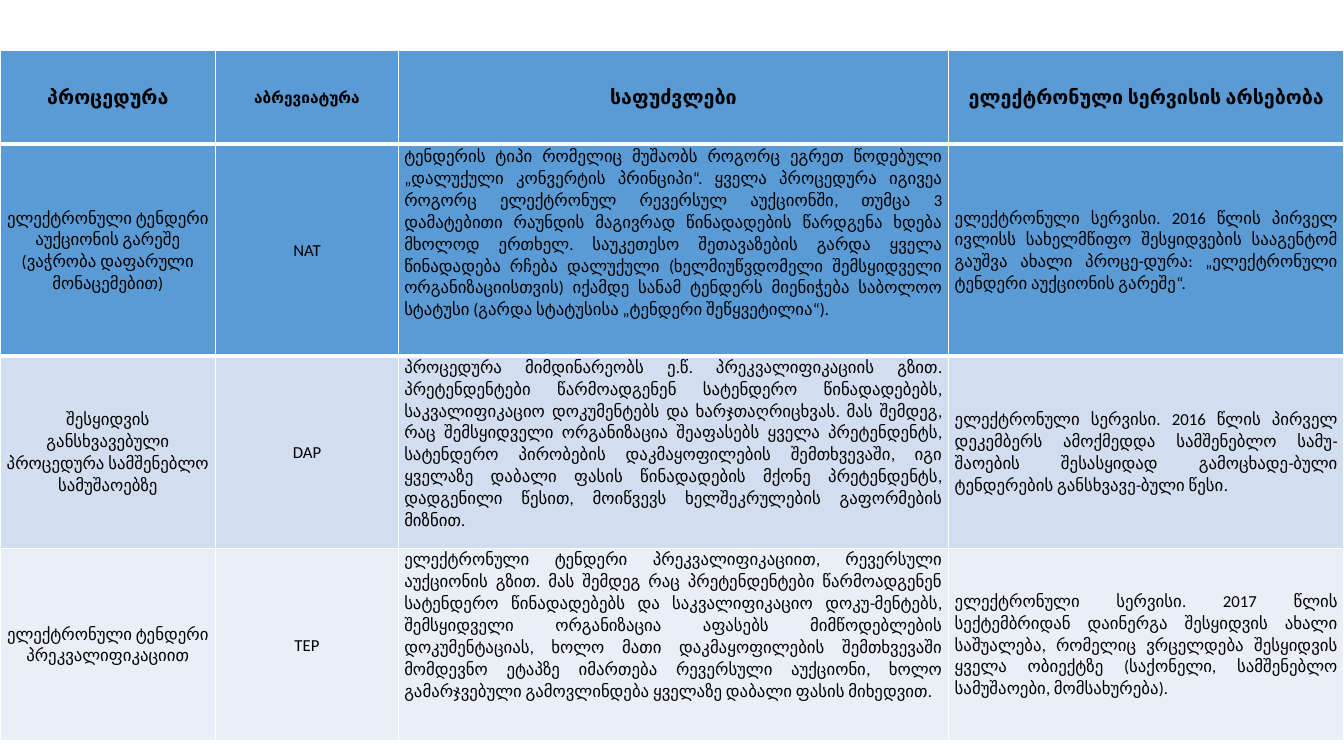
from lxml import etree
from pptx import Presentation
from pptx import util as u
from pptx.dml.color import RGBColor
from pptx.enum import text
from pptx.oxml import ns

COLORS = {"blue": "5B9BD5", "band": "D2DEEF", "pale": "EAEFF7",
          "line": "FFFFFF", "ink": "000000"}
FONT = "Calibri"
COLUMNS = [2.14, 1.81, 5.46, 3.92]
HEADER_TOP, HEADER_HEIGHT = 0.5, 0.93
BODY_TOP, BODY_HEIGHTS = 1.44, [2.09, 1.91, 1.91]
CENTER, JUSTIFY = text.PP_ALIGN.CENTER, text.PP_ALIGN.JUSTIFY
MIDDLE, TOP = text.MSO_ANCHOR.MIDDLE, text.MSO_ANCHOR.TOP

HEADINGS = ["პროცედურა", "აბრევიატურა", "საფუძვლები", "ელექტრონული სერვისის არსებობა"]
PROCEDURES = [
    ["ელექტრონული ტენდერი აუქციონის გარეშე (ვაჭრობა დაფარული მონაცემებით)",
     "NAT",
     "ტენდერის ტიპი რომელიც მუშაობს როგორც ეგრეთ წოდებული „დალუქული კონვერტის "
     "პრინციპი“. ყველა პროცედურა იგივეა როგორც ელექტრონულ რევერსულ აუქციონში, თუმცა 3 "
     "დამატებითი რაუნდის მაგივრად წინადადების წარდგენა ხდება მხოლოდ ერთხელ. საუკეთესო "
     "შეთავაზების გარდა ყველა წინადადება რჩება დალუქული (ხელმიუწვდომელი შემსყიდველი "
     "ორგანიზაციისთვის) იქამდე სანამ ტენდერს მიენიჭება საბოლოო სტატუსი (გარდა სტატუსისა "
     "„ტენდერი შეწყვეტილია“).",
     "ელექტრონული სერვისი. 2016 წლის პირველ ივლისს სახელმწიფო შესყიდვების სააგენტომ "
     "გაუშვა ახალი პროცე-დურა: „ელექტრონული ტენდერი აუქციონის გარეშე“."],
    ["შესყიდვის განსხვავებული პროცედურა სამშენებლო სამუშაოებზე",
     "DAP",
     "პროცედურა მიმდინარეობს ე.წ. პრეკვალიფიკაციის გზით. პრეტენდენტები წარმოადგენენ "
     "სატენდერო წინადადებებს, საკვალიფიკაციო დოკუმენტებს და ხარჯთაღრიცხვას. მას შემდეგ, "
     "რაც შემსყიდველი ორგანიზაცია შეაფასებს ყველა პრეტენდენტს, სატენდერო პირობების "
     "დაკმაყოფილების შემთხვევაში, იგი ყველაზე დაბალი ფასის წინადადების მქონე პრეტენდენტს, "
     "დადგენილი წესით, მოიწვევს ხელშეკრულების გაფორმების მიზნით.",
     "ელექტრონული სერვისი. 2016 წლის პირველ დეკემბერს ამოქმედდა სამშენებლო სამუ-შაოების "
     "შესასყიდად გამოცხადე-ბული ტენდერების განსხვავე-ბული წესი."],
    ["ელექტრონული ტენდერი პრეკვალიფიკაციით",
     "TEP",
     "ელექტრონული ტენდერი პრეკვალიფიკაციით, რევერსული აუქციონის გზით. მას შემდეგ რაც "
     "პრეტენდენტები წარმოადგენენ სატენდერო წინადადებებს და საკვალიფიკაციო დოკუ-მენტებს, "
     "შემსყიდველი ორგანიზაცია აფასებს მიმწოდებლების დოკუმენტაციას, ხოლო მათი "
     "დაკმაყოფილების შემთხვევაში მომდევნო ეტაპზე იმართება რევერსული აუქციონი, ხოლო "
     "გამარჯვებული გამოვლინდება ყველაზე დაბალი ფასის მიხედვით.",
     "ელექტრონული სერვისი. 2017 წლის სექტემბრიდან დაინერგა შესყიდვის ახალი საშუალება, "
     "რომელიც ვრცელდება შესყიდვის ყველა ობიექტზე (საქონელი, სამშენებლო სამუშაოები, "
     "მომსახურება)."],
]


def color(name):
    return RGBColor.from_string(COLORS[name])


def add_borders(cell, bottom):
    properties = cell._tc.get_or_add_tcPr()
    for side, width in (("L", 1), ("R", 1), ("T", 1), ("B", bottom)):
        line = etree.SubElement(properties, ns.qn(f"a:ln{side}"), w=str(u.Pt(width)))
        fill = etree.SubElement(line, ns.qn("a:solidFill"))
        etree.SubElement(fill, ns.qn("a:srgbClr"), val=COLORS["line"])


def add_grid(slide, top, heights):
    frame = slide.shapes.add_table(
        len(heights), len(COLUMNS), 0, u.Inches(top),
        u.Inches(sum(COLUMNS)), u.Inches(sum(heights)))
    table = frame.table
    table.first_row = table.horz_banding = False
    for column, width in zip(table.columns, COLUMNS):
        column.width = u.Inches(width)
    for row, height in zip(table.rows, heights):
        row.height = u.Inches(height)
    return table


def fill_cell(cell, content, fill, size, align=CENTER, anchor=MIDDLE,
              bold=False, bottom=1, inset=0.06):
    add_borders(cell, bottom)
    cell.fill.solid()
    cell.fill.fore_color.rgb = color(fill)
    cell.margin_left = cell.margin_right = u.Inches(inset)
    cell.margin_top = cell.margin_bottom = 0
    cell.vertical_anchor = anchor
    cell.text_frame.text = content
    paragraph = cell.text_frame.paragraphs[0]
    paragraph.alignment = align
    paragraph.line_spacing = 1.07
    font = paragraph.runs[0].font
    font.name, font.size, font.bold = FONT, u.Pt(size), bold
    font.color.rgb = color("ink")


def add_procedures(slide):
    table = add_grid(slide, BODY_TOP, BODY_HEIGHTS)
    aligns = [CENTER, CENTER, JUSTIFY, JUSTIFY]
    anchors = [MIDDLE, MIDDLE, TOP, MIDDLE]
    styles = [("blue", 3), ("band", 1), ("pale", 1)]
    for row, contents, (fill, bottom) in zip(table.rows, PROCEDURES, styles):
        for cell, content, align, anchor in zip(row.cells, contents, aligns, anchors):
            fill_cell(cell, content, fill, 12, align, anchor, bottom=bottom)


def add_header(slide):
    table = add_grid(slide, HEADER_TOP, [HEADER_HEIGHT])
    for cell, heading, size in zip(table.rows[0].cells, HEADINGS, [14, 11, 14, 14]):
        fill_cell(cell, heading, "blue", size, bold=True, bottom=3, inset=0.07)


def main():
    presentation = Presentation()
    presentation.slide_width, presentation.slide_height = u.Inches(13.33), u.Inches(7.5)
    slide = presentation.slides.add_slide(presentation.slide_layouts[6])
    add_procedures(slide)
    add_header(slide)
    presentation.save("out.pptx")


if __name__ == "__main__":
    main()
